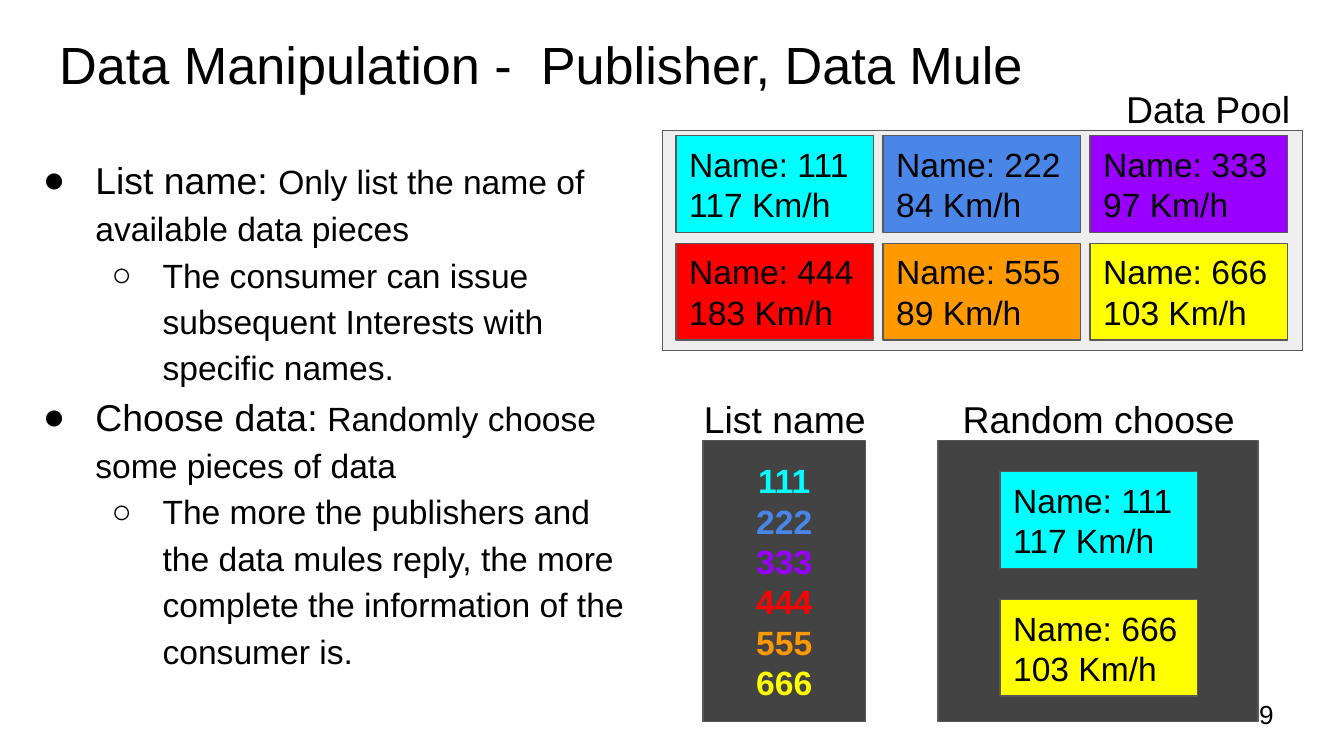
from dataclasses import dataclass
from typing import NamedTuple

from lxml import etree
from pptx import Presentation
from pptx.dml.color import RGBColor
from pptx.enum.shapes import MSO_SHAPE
from pptx.enum.text import MSO_ANCHOR, MSO_AUTO_SIZE, PP_ALIGN
from pptx.oxml.ns import qn
from pptx.util import Inches, Pt

RECTANGLE = MSO_SHAPE.RECTANGLE
TOP, MIDDLE = MSO_ANCHOR.TOP, MSO_ANCHOR.MIDDLE
LEFT, CENTER = PP_ALIGN.LEFT, PP_ALIGN.CENTER
FIXED_SIZE = MSO_AUTO_SIZE.NONE


@dataclass(frozen=True)
class Theme:
    font: str = "Arial"
    ink: str = "000000"
    border: str = "595959"
    panel: str = "434343"
    pool: str = "EEEEEE"
    title_size: int = 28
    heading_size: int = 20
    text_size: int = 18
    number_size: int = 14


THEME = Theme()


class Box(NamedTuple):
    left: float
    top: float
    width: float
    height: float


class Span(NamedTuple):
    text: str
    size: int = THEME.text_size
    color: str = THEME.ink
    bold: bool = False


class Record(NamedTuple):
    name: str
    speed: str
    color: str


class Point(NamedTuple):
    level: int
    spans: list[Span]


RECORDS = [
    Record("111", "117 Km/h", "00FFFF"),
    Record("222", "84 Km/h", "4A86E8"),
    Record("333", "97 Km/h", "9900FF"),
    Record("444", "183 Km/h", "FF0000"),
    Record("555", "89 Km/h", "FF9900"),
    Record("666", "103 Km/h", "FFFF00"),
]
POINTS = [
    Point(0, [Span("List name: ", THEME.heading_size),
              Span("Only list the name of available data pieces")]),
    Point(1, [Span("The consumer can issue subsequent Interests with specific names.")]),
    Point(0, [Span("Choose data:", THEME.heading_size),
              Span(" Randomly choose some pieces of data")]),
    Point(1, [Span("The more the publishers and the data mules reply, the more "
                   "complete the information of the consumer is.")]),
]
BULLETS = {0: "●", 1: "○"}
INDENTS = {0: (0.5, -0.39), 1: (1.0, -0.38)}

PAGE_WIDTH = 10
PAGE_HEIGHT = PAGE_WIDTH * 9 / 16
CARD_WIDTH, CARD_HEIGHT = 1.47, 0.72
POOL_LEFT, POOL_TOP = 5.03, 1.01
COLUMN_STEP, ROW_STEP = 1.54, 0.8
PANEL_TOP, PANEL_HEIGHT = 3.28, 2.09
LABEL_HEIGHT = 0.43


def inches(box: Box) -> list[int]:
    return [Inches(value) for value in box]


def write_text(frame, lines: list[list[Span]], *, align=LEFT, anchor=TOP) -> None:
    """Write one paragraph per line; a newline in a span is a line break."""
    frame.word_wrap = True
    frame.auto_size = FIXED_SIZE
    frame.vertical_anchor = anchor
    frame.margin_left = frame.margin_right = Inches(0.1)
    frame.margin_top = frame.margin_bottom = Inches(0.1)
    for index, line in enumerate(lines):
        para = frame.add_paragraph() if index else frame.paragraphs[0]
        para.alignment = align
        for span in line:
            for position, piece in enumerate(span.text.split("\n")):
                if position:
                    para.add_line_break()
                run = para.add_run()
                run.text = piece
                run.font.name = THEME.font
                run.font.size = Pt(span.size)
                run.font.bold = span.bold
                run.font.color.rgb = RGBColor.from_string(span.color)


def format_point(para, level: int) -> None:
    """Give a list paragraph its spacing, indent and bullet."""
    para.level = level
    para.line_spacing = 1.15
    para.space_before = para.space_after = Pt(0)
    properties = para._p.get_or_add_pPr()
    margin, indent = INDENTS[level]
    properties.set("marL", str(Inches(margin)))
    properties.set("indent", str(Inches(indent)))
    color = etree.SubElement(properties, qn("a:buClr"))
    etree.SubElement(color, qn("a:srgbClr"), val=THEME.ink)
    etree.SubElement(properties, qn("a:buFont"), typeface=THEME.font)
    etree.SubElement(properties, qn("a:buChar"), char=BULLETS[level])


def place(shape, box: Box) -> None:
    shape.left, shape.top, shape.width, shape.height = inches(box)


def add_rectangle(shapes, box: Box, fill: str):
    shape = shapes.add_shape(RECTANGLE, *inches(box))
    shape.shadow.inherit = False
    shape.fill.solid()
    shape.fill.fore_color.rgb = RGBColor.from_string(fill)
    shape.line.color.rgb = RGBColor.from_string(THEME.border)
    shape.line.width = Pt(0.75)
    return shape


def add_card(shapes, left: float, top: float, record: Record) -> None:
    card = add_rectangle(shapes, Box(left, top, CARD_WIDTH, CARD_HEIGHT), record.color)
    write_text(card.text_frame, [[Span(f"Name: {record.name}\n{record.speed}")]],
               anchor=MIDDLE)


def add_label(shapes, box: Box, text: str, *, size=THEME.heading_size,
              align=LEFT, anchor=TOP) -> None:
    label = shapes.add_textbox(*inches(box))
    write_text(label.text_frame, [[Span(text, size)]], align=align, anchor=anchor)


def main() -> None:
    deck = Presentation()
    deck.slide_width, deck.slide_height = Inches(PAGE_WIDTH), Inches(PAGE_HEIGHT)
    page = deck.slides.add_slide(deck.slide_layouts[1])
    shapes = page.shapes

    # Title and explanation
    title, body = shapes.title, page.placeholders[1]
    place(title, Box(0.34, 0.14, 9.32, 0.63))
    write_text(title.text_frame,
               [[Span("Data Manipulation -  Publisher, Data Mule", THEME.title_size)]])
    place(body, Box(0.11, 1.02, 4.64, 4.29))
    write_text(body.text_frame, [point.spans for point in POINTS])
    for para, point in zip(body.text_frame.paragraphs, POINTS):
        format_point(para, point.level)

    # Page number
    add_label(shapes, Box(9.27, 5.1, 0.6, LABEL_HEIGHT), "9",
              size=THEME.number_size, anchor=MIDDLE)

    # Dark panels of the two replies
    names = add_rectangle(shapes, Box(5.23, PANEL_TOP, 1.21, PANEL_HEIGHT), THEME.panel)
    write_text(names.text_frame,
               [[Span(record.name, color=record.color, bold=True)] for record in RECORDS],
               align=CENTER, anchor=MIDDLE)
    add_rectangle(shapes, Box(6.98, PANEL_TOP, 2.38, PANEL_HEIGHT), THEME.panel)

    # Data pool: three cards to a row
    pool = shapes.add_group_shape().shapes
    add_rectangle(pool, Box(4.93, 0.97, 4.76, 1.64), THEME.pool)
    for index, record in enumerate(RECORDS):
        row, column = divmod(index, 3)
        add_card(pool, POOL_LEFT + column * COLUMN_STEP, POOL_TOP + row * ROW_STEP, record)

    # Labels
    add_label(shapes, Box(8.28, 0.54, 1.45, LABEL_HEIGHT), "Data Pool")
    add_label(shapes, Box(5.09, 2.85, 1.5, LABEL_HEIGHT), "List name", align=CENTER)
    add_label(shapes, Box(6.93, 2.85, 2.49, LABEL_HEIGHT), "Random choose", align=CENTER)

    # Randomly chosen data
    for top, record in ((4.46, RECORDS[-1]), (3.51, RECORDS[0])):
        add_card(shapes, 7.44, top, record)

    deck.save("out.pptx")


if __name__ == "__main__":
    main()
